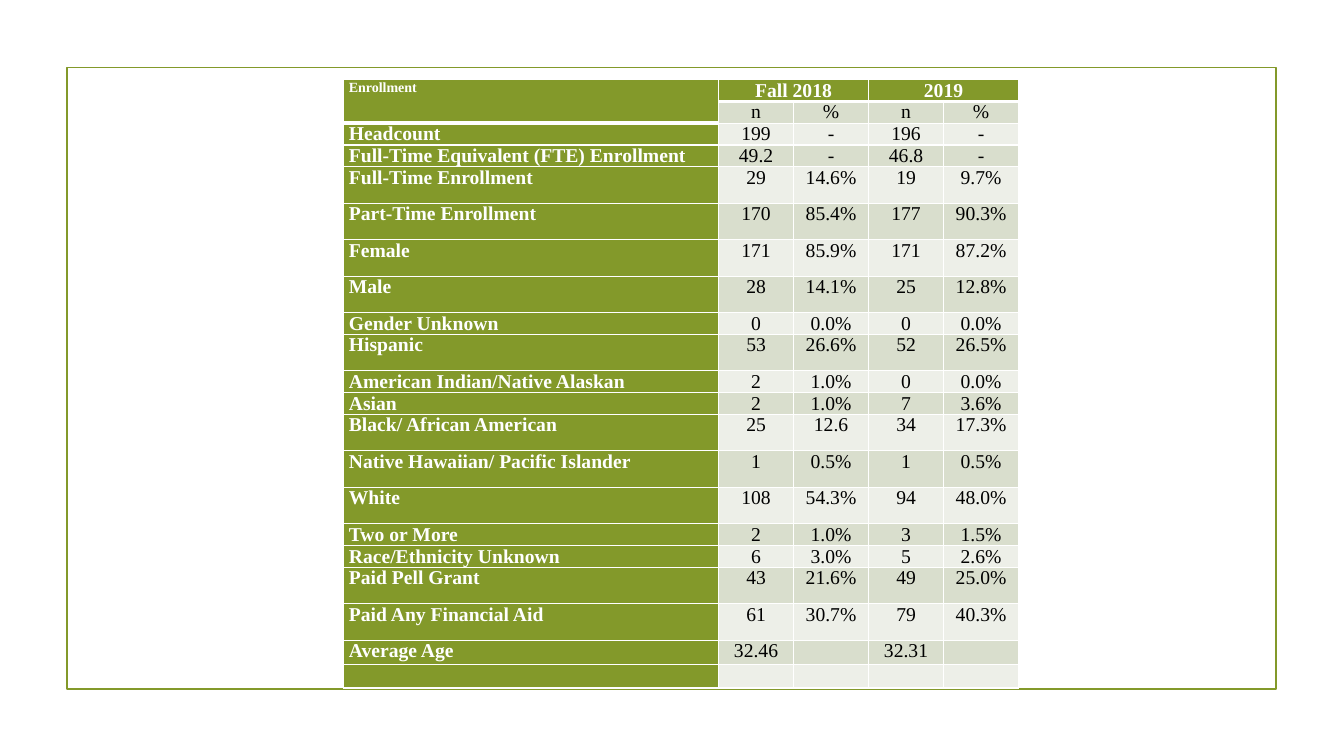
"""Build the enrollment comparison slide for Fall 2018 and 2019."""
from dataclasses import dataclass
from typing import Optional

from lxml.etree import SubElement as add_element
from pptx import Presentation
from pptx.dml.color import RGBColor as Color
from pptx.enum.shapes import MSO_SHAPE as Shape
from pptx.enum.text import PP_ALIGN as Align
from pptx.oxml.ns import qn
from pptx.slide import Slide
from pptx.table import Table, _Cell as Cell
from pptx.util import Pt


@dataclass(frozen=True)
class Theme:
    font: str = "Times New Roman"
    green: str = "83992A"
    white: str = "FFFFFF"
    black: str = "000000"
    dark_band: str = "D9DECD"
    light_band: str = "EDEFE8"
    body_size: float = 14
    corner_size: float = 10
    thin: float = 1
    thick: float = 3
    frame_line: float = 1.25


@dataclass(frozen=True)
class Entry:
    label: str
    values: tuple[str, ...]
    tall: bool = False


THEME = Theme()
SHORT_ROW, TALL_ROW = 15.5, 26.1
LABEL_WIDTH, VALUE_WIDTH = 267.7, 53.6
ENTRIES = (
    Entry("Enrollment", ("Fall 2018", "", "2019", "")),
    Entry("", ("n", "%", "n", "%")),
    Entry("Headcount", ("199", "-", "196", "-")),
    Entry("Full-Time Equivalent (FTE) Enrollment", ("49.2", "-", "46.8", "-")),
    Entry("Full-Time Enrollment", ("29", "14.6%", "19", "9.7%"), True),
    Entry("Part-Time Enrollment", ("170", "85.4%", "177", "90.3%"), True),
    Entry("Female", ("171", "85.9%", "171", "87.2%"), True),
    Entry("Male", ("28", "14.1%", "25", "12.8%"), True),
    Entry("Gender Unknown", ("0", "0.0%", "0", "0.0%")),
    Entry("Hispanic", ("53", "26.6%", "52", "26.5%"), True),
    Entry("American Indian/Native Alaskan", ("2", "1.0%", "0", "0.0%")),
    Entry("Asian", ("2", "1.0%", "7", "3.6%")),
    Entry("Black/ African American", ("25", "12.6", "34", "17.3%"), True),
    Entry("Native Hawaiian/ Pacific Islander", ("1", "0.5%", "1", "0.5%"), True),
    Entry("White", ("108", "54.3%", "94", "48.0%"), True),
    Entry("Two or More", ("2", "1.0%", "3", "1.5%")),
    Entry("Race/Ethnicity Unknown", ("6", "3.0%", "5", "2.6%")),
    Entry("Paid Pell Grant", ("43", "21.6%", "49", "25.0%"), True),
    Entry("Paid Any Financial Aid", ("61", "30.7%", "79", "40.3%"), True),
    Entry("Average Age", ("32.46", "", "32.31", "")),
    Entry("", ("", "", "", "")),
)


def draw_frame(page: Slide) -> None:
    """Outline the content area."""
    frame = page.shapes.add_shape(Shape.RECTANGLE, Pt(47.7), Pt(48.2), Pt(864), Pt(444))
    frame.shadow.inherit = False
    frame.fill.background()
    frame.line.color.rgb = Color.from_string(THEME.green)
    frame.line.width = Pt(THEME.frame_line)


def set_borders(cell: Cell, top: float, bottom: float) -> None:
    """Give a cell white borders of the stated widths."""
    properties = cell._tc.get_or_add_tcPr()
    widths = {"lnL": THEME.thin, "lnR": THEME.thin, "lnT": top, "lnB": bottom}
    for tag, width in widths.items():
        border = add_element(properties, qn(f"a:{tag}"), w=str(int(Pt(width))))
        paint = add_element(border, qn("a:solidFill"))
        add_element(paint, qn("a:srgbClr"), val=THEME.white)


def write_text(cell: Cell, text: str, size: float, bold: bool, align: Optional[Align]) -> None:
    """Put one run in a cell, or keep an empty cell at the same text size."""
    para = cell.text_frame.paragraphs[0]
    para.alignment = align
    if not text:
        para._p.get_or_add_endParaRPr().set("sz", str(int(size * 100)))
        return
    span = para.add_run()
    span.text = text
    span.font.name = THEME.font
    span.font.size = Pt(size)
    span.font.bold = bold
    span.font.color.rgb = Color.from_string(THEME.white if bold else THEME.black)


def is_heavy(row: int, column: int) -> bool:
    """Tell whether the line above a cell closes the header."""
    return row == (1 if column else 2)


def fill_cell(table: Table, row: int, column: int, text: str) -> None:
    """Style one cell and write its text."""
    cell = table.cell(row, column)
    cell.margin_left = cell.margin_right = Pt(3.6)
    cell.margin_top = cell.margin_bottom = Pt(0)
    heading = row == 0 or column == 0
    set_borders(
        cell,
        THEME.thick if is_heavy(row, column) else THEME.thin,
        THEME.thick if row == 0 or is_heavy(row + 1, column) else THEME.thin,
    )
    band = THEME.dark_band if row % 2 else THEME.light_band
    cell.fill.solid()
    cell.fill.fore_color.rgb = Color.from_string(THEME.green if heading else band)
    size = THEME.corner_size if row == column == 0 else THEME.body_size
    write_text(cell, text, size, heading, Align.CENTER if column else None)


def draw_table(page: Slide) -> None:
    """Draw the enrollment table."""
    widths = [LABEL_WIDTH] + [VALUE_WIDTH] * 4
    heights = [TALL_ROW if entry.tall else SHORT_ROW for entry in ENTRIES]
    table = page.shapes.add_table(
        len(heights), len(widths), Pt(245.6), Pt(57), Pt(sum(widths)), Pt(sum(heights))
    ).table
    table.first_row = table.horz_banding = False
    for column, width in zip(table.columns, widths):
        column.width = Pt(width)
    for row, entry in enumerate(ENTRIES):
        table.rows[row].height = Pt(heights[row])
        for column, text in enumerate((entry.label, *entry.values)):
            fill_cell(table, row, column, text)
    table.cell(0, 0).merge(table.cell(1, 0))
    for column in (1, 3):
        table.cell(0, column).merge(table.cell(0, column + 1))


def main() -> None:
    """Create and save the deck."""
    deck = Presentation()
    deck.slide_width, deck.slide_height = Pt(960), Pt(540)
    page = deck.slides.add_slide(deck.slide_layouts[6])
    draw_frame(page)
    draw_table(page)
    deck.save("out.pptx")


if __name__ == "__main__":
    main()
